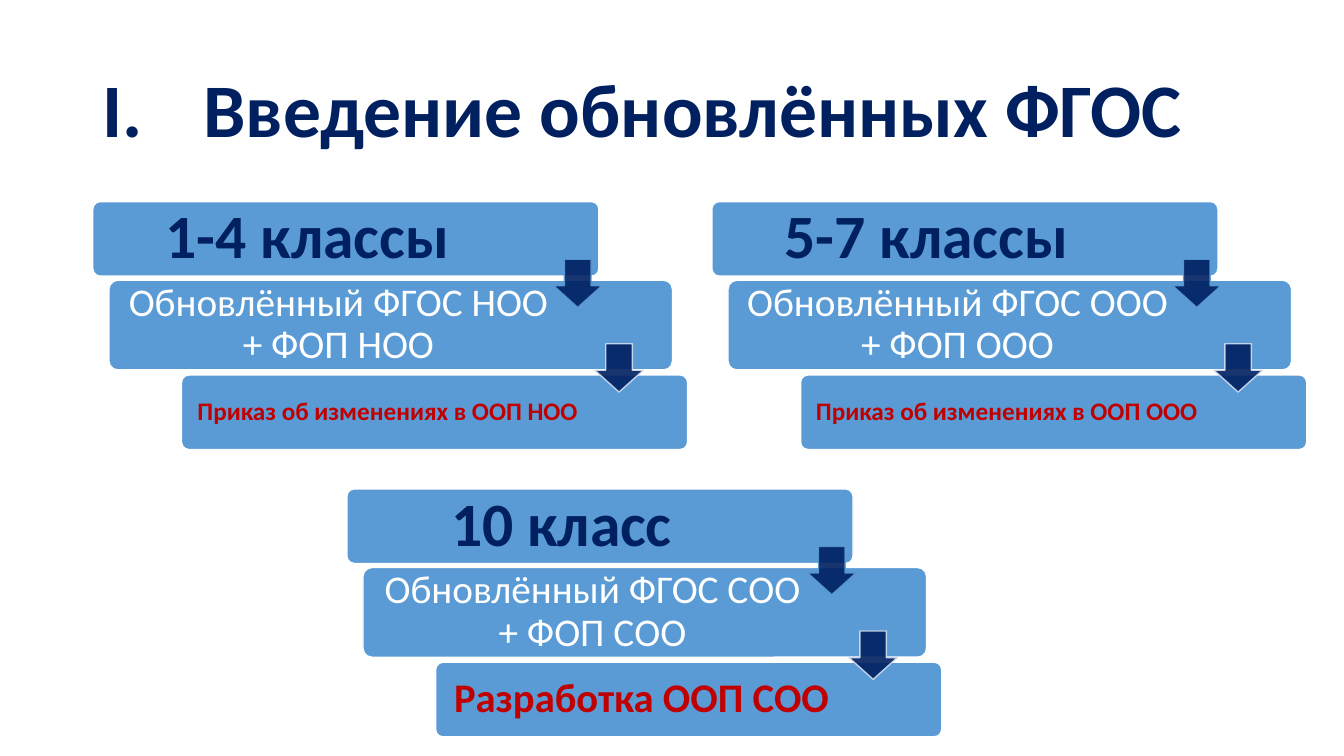
from dataclasses import dataclass
from lxml.etree import SubElement
from pptx import Presentation
from pptx.dml.color import RGBColor
from pptx.enum.shapes import MSO_SHAPE as SHAPE
from pptx.enum.text import MSO_ANCHOR as ANCHOR, PP_ALIGN as ALIGN
from pptx.oxml.ns import qn
from pptx.util import Pt

TITLE = "I.\tВведение обновлённых ФГОС"
CASCADES = [
    (92, 200, "1-4 классы", "Обновлённый ФГОС НОО + ФОП НОО",
     "Приказ об изменениях в ООП НОО", 18, 7),
    (706, 200, "5-7 классы", "Обновлённый ФГОС ООО + ФОП ООО",
     "Приказ об изменениях в ООП ООО", 18, 7),
    (344, 485, "10 класс", "Обновлённый ФГОС СОО + ФОП СОО",
     "Разработка ООП СОО", 29, 12),
]


@dataclass(frozen=True)
class Theme:
    font: str = "Calibri"
    navy: str = "002060"
    blue: str = "5B9BD5"
    pale: str = "D2DEEF"
    white: str = "FFFFFF"
    red: str = "C00000"
    title: int = 54
    grade: int = 44
    standard: int = 28


T = Theme()
EMU_PER_PX = 9144
STEP_BOXES = [(0, 0, 502, 74, 422), (16, 78, 559, 89, 451), (88, 172, 502, 74, 405)]
ARROWS = [(457, 57, T.blue), (498, 141, T.pale)]
ARROW_SIZE = 48
TEXT_GAP = 2


def px(*values):
    return [round(v * EMU_PER_PX) for v in values]


def add_text(shapes, text, box, size, color, bold=False, align=ALIGN.CENTER,
             inset=(10, 10), tab=None):
    tb = shapes.add_textbox(*px(*box))
    tf = tb.text_frame
    tf.word_wrap = True
    tf.vertical_anchor = ANCHOR.MIDDLE
    tf.margin_left, tf.margin_top = px(*inset)
    tf.margin_right, tf.margin_bottom = px(*inset)
    p = tf.paragraphs[0]
    p.alignment = align
    p.line_spacing = 0.9
    if tab:
        tabs = SubElement(p._p.get_or_add_pPr(), qn("a:tabLst"))
        SubElement(tabs, qn("a:tab"), pos=str(px(tab)[0]), algn="l")
    r = p.add_run()
    r.text = text
    r.font.name = T.font
    r.font.size = Pt(size)
    r.font.bold = bold
    r.font.color.rgb = RGBColor.from_string(color)


def add_block(shapes, kind, box, fill, line, adjustments, opacity=None):
    sp = shapes.add_shape(kind, *px(*box))
    sp.shadow.inherit = False
    for i, value in enumerate(adjustments):
        sp.adjustments[i] = value
    sp.fill.solid()
    sp.fill.fore_color.rgb = RGBColor.from_string(fill)
    sp.line.color.rgb = RGBColor.from_string(line)
    sp.line.width = Pt(1)
    if opacity:
        for clr in sp._element.spPr.iter(qn("a:srgbClr")):
            SubElement(clr, qn("a:alpha"), val=str(opacity * 1000))


def add_cascade(s, left, top, grade, standard, action, action_size, action_inset):
    shapes = s.shapes.add_group_shape().shapes
    steps = [(grade, T.grade, T.navy, True, 18),
             (standard, T.standard, T.white, False, 12),
             (action, action_size, T.red, True, action_inset)]
    for (dx, dy, w, h, text_w), (text, size, color, bold, inset) in zip(STEP_BOXES, steps):
        x, y = left + dx, top + dy
        add_block(shapes, SHAPE.ROUNDED_RECTANGLE, (x, y, w, h), T.blue, T.white, [0.1])
        add_text(shapes, text, (x + TEXT_GAP, y + TEXT_GAP, text_w, h - 2 * TEXT_GAP),
                 size, color, bold, inset=(inset, inset))
    for dx, dy, line in ARROWS:
        add_block(shapes, SHAPE.DOWN_ARROW, (left + dx, top + dy, ARROW_SIZE, ARROW_SIZE),
                  T.navy, line, [0.55, 0.45], opacity=90)


def main():
    prs = Presentation()
    prs.slide_width, prs.slide_height = px(1333, 750)
    s = prs.slides.add_slide(prs.slide_layouts[6])
    add_text(s.shapes, TITLE, (92, 40, 1150, 145), T.title, T.navy, True,
             align=ALIGN.LEFT, inset=(10, 5), tab=100)
    for cascade in CASCADES:
        add_cascade(s, *cascade)
    prs.save("out.pptx")


if __name__ == "__main__":
    main()
